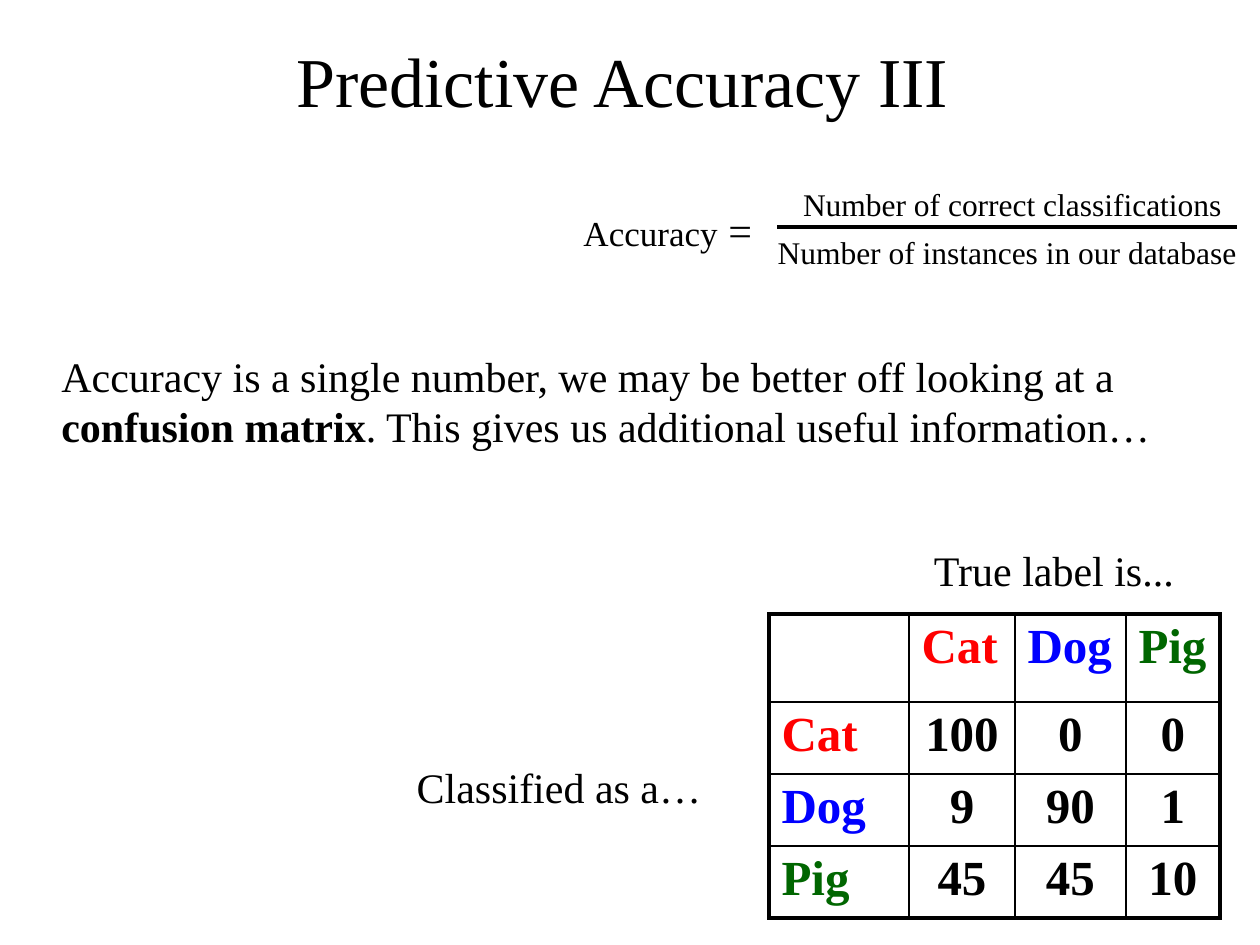
from lxml import etree
from pptx import Presentation, util as u
from pptx.dml.color import RGBColor
from pptx.enum import shapes, text
from pptx.oxml.ns import qn

PX = 914400 / 126
FONT = "Times New Roman"
INK = {"black": "000000", "Cat": "FF0000", "Dog": "0000FF", "Pig": "006600"}
LEFT, MID = text.PP_ALIGN.LEFT, text.PP_ALIGN.CENTER

# Each paragraph is a list of runs: words, size, bold
TITLE = [[("Predictive Accuracy III", 40, False)]]
BODY = [[
    ("Accuracy is a single number, we may be better off looking at a ", 24, False),
    ("confusion matrix", 24, True),
    (". This gives us additional useful information…", 24, False),
]]
LABELS = [
    ((571, 198, 204, 63), [[("Accuracy", 20, False), (" = ", 24, False)]]),
    ((765, 179, 495, 101), [
        [("Number of correct classifications", 18, False)],
        [("Number of instances in our database", 18, False), (" ", 24, False)],
    ]),
    ((404, 755, 310, 63), [[("Classified as a…", 24, False)]]),
    ((921, 538, 266, 63), [[("True label is...", 24, False)]]),
]
BAR = (1237, 227, 777, 227)
MATRIX = [
    ["", "Cat", "Dog", "Pig"],
    ["Cat", "100", "0", "0"],
    ["Dog", "9", "90", "1"],
    ["Pig", "45", "45", "10"],
]
COLS, ROWS = [140, 106, 111, 94], [88, 72, 72, 72]
CORNER = (769, 614)


def emu(*nums):
    return [u.Emu(round(n * PX)) for n in nums]


def write(frame, paras, align=MID, ink="black"):
    for i, runs in enumerate(paras):
        para = frame.paragraphs[0] if i == 0 else frame.add_paragraph()
        para.alignment = align
        for words, size, bold in runs:
            run = para.add_run()
            run.text = words
            font = run.font
            font.name, font.size, font.bold = FONT, u.Pt(size), bold
            font.color.rgb = RGBColor.from_string(INK[ink])


def label(slide, box, paras, wrap=False, align=MID, anchor=text.MSO_ANCHOR.TOP):
    frame = slide.shapes.add_textbox(*emu(*box)).text_frame
    frame.word_wrap = wrap
    frame.vertical_anchor = anchor
    write(frame, paras, align)


def rule(slide, ends):
    line = slide.shapes.add_connector(shapes.MSO_CONNECTOR.STRAIGHT, *emu(*ends))
    line.line.width = u.Pt(2)
    line.line.color.rgb = RGBColor.from_string(INK["black"])
    etree.SubElement(line._element.spPr, qn("a:effectLst"))


def border(cell, outer):
    """Draw four sides, heavier where the side is on the table's edge."""
    props = cell._tc.get_or_add_tcPr()
    for i, (side, edge) in enumerate(outer.items()):
        line = etree.Element(qn("a:ln" + side), w=str(u.Pt(2.25 if edge else 1)))
        fill = etree.SubElement(line, qn("a:solidFill"))
        etree.SubElement(fill, qn("a:srgbClr"), val=INK["black"])
        props.insert(i, line)


def space(para, share):
    """Set the space before as thousandths of a percent of the line."""
    before = etree.Element(qn("a:spcBef"))
    etree.SubElement(before, qn("a:spcPct"), val=str(share))
    para._p.get_or_add_pPr().insert(0, before)


def matrix(slide):
    box = emu(*CORNER, sum(COLS), sum(ROWS))
    table = slide.shapes.add_table(len(ROWS), len(COLS), *box).table
    table.first_row = table.horz_banding = False
    for col, wide in zip(table.columns, emu(*COLS)):
        col.width = wide
    for row, high in zip(table.rows, emu(*ROWS)):
        row.height = high
    for r, row in enumerate(MATRIX):
        for c, word in enumerate(row):
            cell = table.cell(r, c)
            cell.fill.background()
            border(cell, {"L": c == 0, "R": c == len(COLS) - 1,
                          "T": r == 0, "B": r == len(ROWS) - 1})
            if word:
                head = word in INK
                write(cell.text_frame, [[(word, 28, True)]],
                      LEFT if head else MID, word if head else "black")
                space(cell.text_frame.paragraphs[0], 20000)


def main():
    deck = Presentation()
    deck.slide_width, deck.slide_height = emu(1260, 945)
    slide = deck.slides.add_slide(deck.slide_layouts[6])
    label(slide, (87, 0, 1071, 158), TITLE, wrap=True, anchor=text.MSO_ANCHOR.MIDDLE)
    for box, paras in LABELS:
        label(slide, box, paras)
    rule(slide, BAR)
    label(slide, (49, 344, 1124, 113), BODY, wrap=True, align=LEFT)
    matrix(slide)
    deck.save("out.pptx")


if __name__ == "__main__":
    main()
